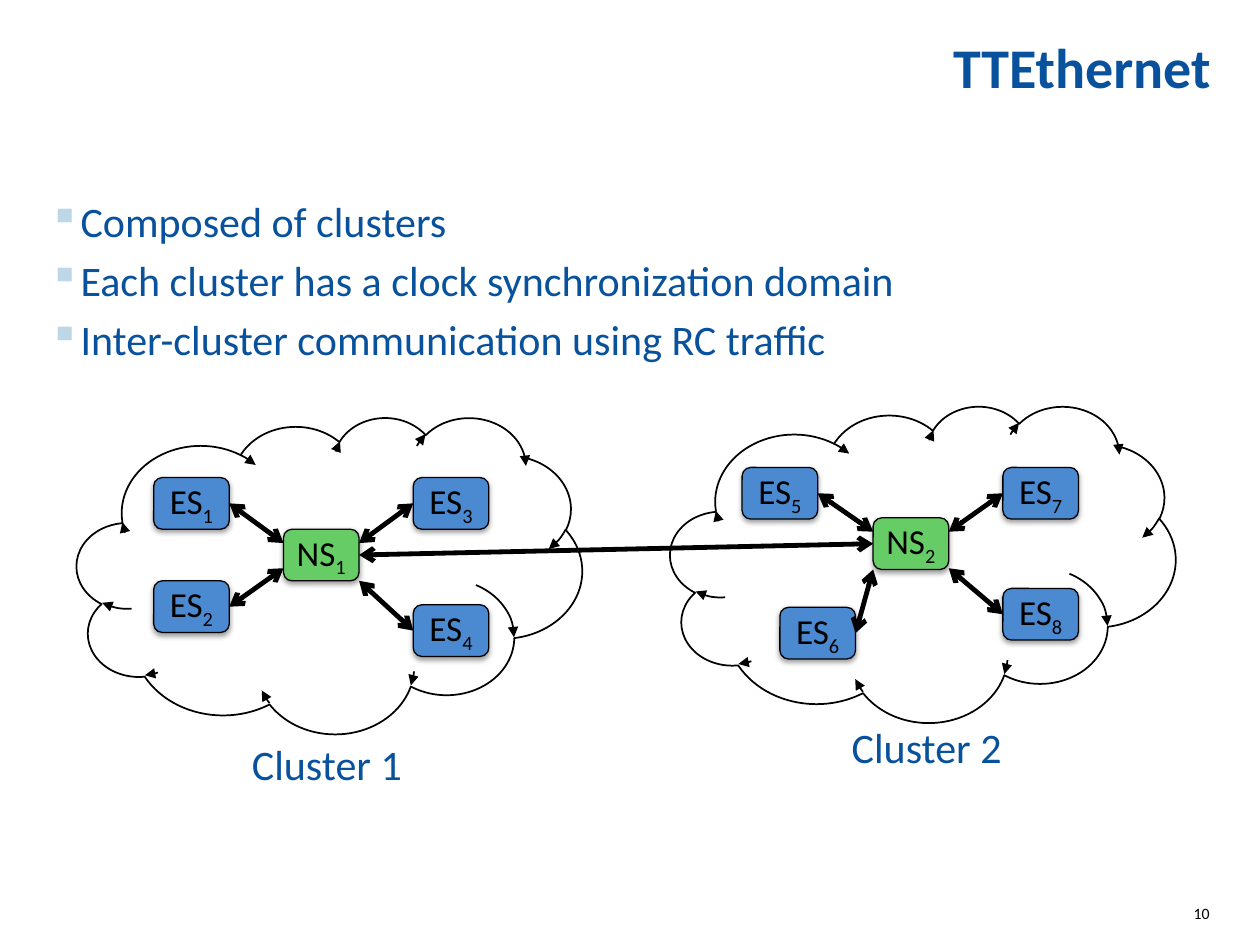
from lxml import etree
from pptx import Presentation, util as u
from pptx.dml.color import RGBColor
from pptx.enum import shapes, text
from pptx.oxml import ns

FONT = "Calibri"
NAVY, PALE, BLACK = "08519C", "BDD7E7", "000000"
BLUE, GREEN = "4B89D0", "66CC66"
NODE_WIDTH, NODE_HEIGHT = 0.6, 0.41
LEFT_SIDE, RIGHT_SIDE = 1, 3

# End systems: number, left, top, and the height at which the link meets the switch
CLUSTERS = [
    dict(number=1, cloud=(0.61, 3.31), label=(0.56, 5.86), switch=(2.25, 4.2),
         systems=[(1, 1.22, 3.79, 0.11), (2, 1.22, 4.61, 0.31),
                  (3, 3.28, 3.79, 0.11), (4, 3.28, 4.8, 0.41)]),
    dict(number=2, cloud=(5.32, 3.22), label=(5.32, 5.73), switch=(6.93, 4.11),
         systems=[(5, 5.89, 3.71, 0.11), (6, 6.19, 4.82, 0.41),
                  (7, 7.96, 3.71, 0.11), (8, 7.96, 4.67, 0.4)]),
]


def color(value):
    return RGBColor.from_string(value)


def add_xml(parent, tag, **attributes):
    element = etree.SubElement(parent, ns.qn(tag))
    for name, value in attributes.items():
        element.set(name, str(value))
    return element


def write(paragraph, content, size=24, fill=NAVY, bold=False, subscript="",
          align=text.PP_ALIGN.LEFT, before=0):
    paragraph.alignment = align
    paragraph.space_before = u.Pt(before)
    for part in filter(None, (content, subscript)):
        run = paragraph.add_run()
        run.text = part
        run.font.name = FONT
        run.font.size = u.Pt(size)
        run.font.bold = bold
        run.font.color.rgb = color(fill)
    if subscript:
        run.font._element.set("baseline", "-25000")


class Diagram:
    def __init__(self, presentation):
        self.slide = presentation.slides.add_slide(presentation.slide_layouts[5])

    def frame(self, shape, anchor=text.MSO_ANCHOR.TOP):
        """Prepare a text frame without margins."""
        frame = shape.text_frame
        frame.margin_left = frame.margin_right = 0
        frame.margin_top = frame.margin_bottom = 0
        frame.word_wrap = True
        frame.auto_size = text.MSO_AUTO_SIZE.NONE
        frame.vertical_anchor = anchor
        return frame

    def title(self, content):
        shape = self.slide.shapes.title
        shape.left, shape.top = u.Inches(0.39), u.Inches(0)
        shape.width, shape.height = u.Inches(9.22), u.Inches(0.79)
        paragraph = self.frame(shape, text.MSO_ANCHOR.BOTTOM).paragraphs[0]
        write(paragraph, content, size=32, bold=True, align=text.PP_ALIGN.RIGHT)
        paragraph.line_spacing = 0.8

    def text_box(self, left, top, width, height):
        return self.frame(self.slide.shapes.add_textbox(
            *map(u.Inches, (left, top, width, height))))

    def bullets(self, items, *box):
        frame = self.text_box(*box)
        for index, item in enumerate(items):
            paragraph = frame.add_paragraph() if index else frame.paragraphs[0]
            write(paragraph, item, before=5)
            properties = paragraph._p.get_or_add_pPr()
            properties.set("marL", str(u.Inches(0.2)))
            properties.set("indent", str(u.Inches(-0.24)))
            add_xml(add_xml(properties, "a:buClr"), "a:srgbClr", val=PALE)
            add_xml(properties, "a:buChar", char="▪")

    def label(self, content, *box, **style):
        write(self.text_box(*box).paragraphs[0], content, **style)

    def node(self, name, number, left, top, fill):
        shape = self.slide.shapes.add_shape(
            shapes.MSO_SHAPE.ROUNDED_RECTANGLE,
            *map(u.Inches, (left, top, NODE_WIDTH, NODE_HEIGHT)))
        shape.fill.solid()
        shape.fill.fore_color.rgb = color(fill)
        shape.line.color.rgb = color(BLACK)
        shape.line.width = u.Pt(0.75)
        effects = add_xml(shape._element.spPr, "a:effectLst")
        shadow = add_xml(effects, "a:outerShdw", blurRad=u.Pt(3.1),
                         dist=u.Pt(1.6), dir=90 * 60000, rotWithShape=0)
        add_xml(add_xml(shadow, "a:srgbClr", val=BLACK), "a:alpha", val=38000)
        write(self.frame(shape, text.MSO_ANCHOR.MIDDLE).paragraphs[0], name, size=20,
              fill=BLACK, subscript=str(number), align=text.PP_ALIGN.CENTER)
        return shape

    def cloud(self, left, top):
        shape = self.slide.shapes.add_shape(
            shapes.MSO_SHAPE.CLOUD, *map(u.Inches, (left, top, 4.01, 2.51)))
        shape.shadow.inherit = False
        shape.fill.background()
        shape.line.color.rgb = color(BLACK)
        shape.line.width = u.Pt(1)
        add_xml(shape.line._get_or_add_ln(), "a:tailEnd", type="triangle")

    def link(self, start, side, end=(0, 0), end_node=None):
        """Join a side of the start node to a point or to the end node's left side."""
        connector = self.slide.shapes.add_connector(
            shapes.MSO_CONNECTOR.STRAIGHT, 0, 0, *map(u.Inches, end))
        connector.begin_connect(start, side)
        if end_node is not None:
            connector.end_connect(end_node, LEFT_SIDE)
        connector.line.color.rgb = color(BLACK)
        connector.line.width = u.Pt(2.75)
        line = connector.line._get_or_add_ln()
        add_xml(line, "a:headEnd", type="arrow")
        add_xml(line, "a:tailEnd", type="arrow")
        add_xml(connector._element.spPr, "a:effectLst")

    def cluster(self, number, cloud, label, switch, systems):
        """Draw one cluster and return its network switch."""
        switch_left, switch_top = switch
        switch_node = self.node("NS", number, switch_left, switch_top, GREEN)
        for system, left, top, height in systems:
            node = self.node("ES", system, left, top, BLUE)
            is_left = left < switch_left
            end_left = switch_left if is_left else switch_left + NODE_WIDTH
            self.link(node, RIGHT_SIDE if is_left else LEFT_SIDE,
                      end=(end_left, switch_top + height))
        self.cloud(*cloud)
        self.label(f"Cluster {number}", *label, 4.07, 0.67,
                   align=text.PP_ALIGN.CENTER, before=5)
        return switch_node


def main():
    presentation = Presentation()
    presentation.slide_width = u.Inches(10)
    presentation.slide_height = u.Inches(7.5)
    diagram = Diagram(presentation)
    diagram.title("TTEthernet")
    diagram.bullets(["Composed of clusters",
                     "Each cluster has a clock synchronization domain",
                     "Inter-cluster communication using RC traffic"],
                    0.39, 1.55, 9.21, 1.41)
    first, second = [diagram.cluster(**cluster) for cluster in CLUSTERS]
    diagram.link(first, RIGHT_SIDE, end_node=second)
    diagram.label("10", 9.27, 7.17, 0.33, 0.33, size=9, fill=BLACK,
                  align=text.PP_ALIGN.RIGHT)
    presentation.save("out.pptx")


if __name__ == "__main__":
    main()
